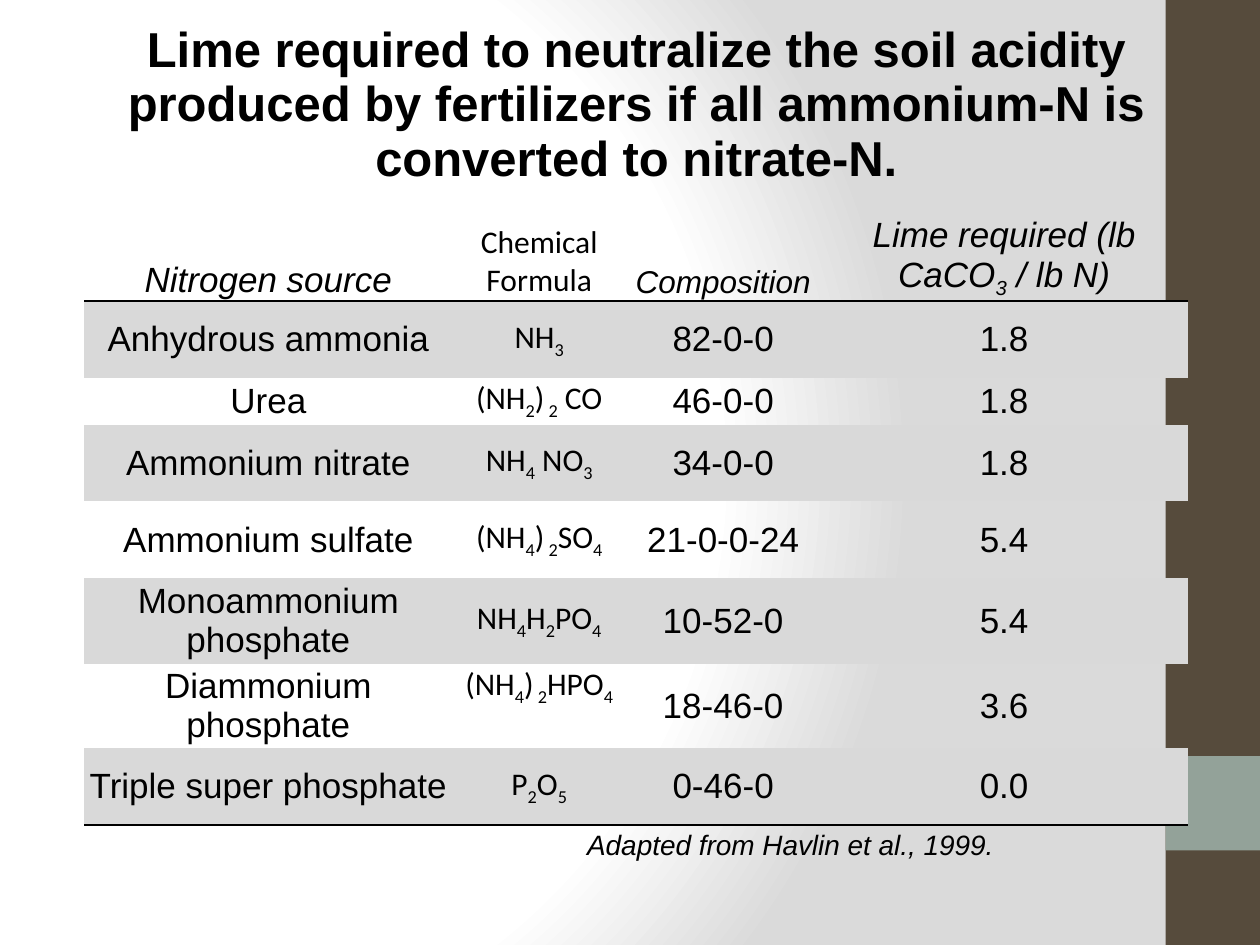
from lxml import etree
from pptx import Presentation
from pptx.dml.color import RGBColor
from pptx.enum.shapes import MSO_SHAPE
from pptx.enum.text import MSO_ANCHOR, PP_ALIGN
from pptx.oxml import parse_xml
from pptx.oxml.ns import nsdecls, qn
from pptx.util import Inches, Pt

COLORS = {
    "black": "000000", "white": "FFFFFF", "gray": "DADADA",
    "band": "D9D9D9", "brown": "564B3C", "sage": "93A299",
}
NO_STYLE = "{2D5ABB26-0587-4C30-8999-92F81FD0307C}"
COL_WIDTHS = [2.92, 1.38, 1.54, 2.92]
ROW_HEIGHTS = [0.9, 0.9, 0.61, 0.37, 0.61, 0.61, 0.68, 0.67, 0.61, 0.33]
TITLE = ("Lime required to neutralize the soil acidity produced by fertilizers "
         "if all ammonium-N is converted to nitrate-N.")
SOURCE = "Adapted from Havlin et al., 1999."
HEADERS = [
    ("Nitrogen source", "Arial", 20, True),
    ("Chemical Formula", "Calibri", 18, False),
    ("Composition", "Arial", 18, True),
    ("Lime required (lb CaCO|3| / lb N)", "Arial", 20, True),
]
FERTILIZERS = [
    ("Anhydrous ammonia", "NH|3", "82-0-0", "1.8"),
    ("Urea", "(NH|2|)| 2| CO", "46-0-0", "1.8"),
    ("Ammonium nitrate", "NH|4| NO|3", "34-0-0", "1.8"),
    ("Ammonium sulfate", "(NH|4|)| 2|SO|4", "21-0-0-24", "5.4"),
    ("Monoammonium phosphate", "NH|4|H|2|PO|4", "10-52-0", "5.4"),
    ("Diammonium phosphate", "(NH|4|)| 2|HPO|4", "18-46-0", "3.6"),
    ("Triple super phosphate", "P|2|O|5", "0-46-0", "0.0"),
]


def paint_background(s):
    """Fill the slide with a circular gradient from white to gray."""
    s.background.fill.gradient()
    old = s.element.find(".//" + qn("a:gradFill"))
    stops = "".join(
        f'<a:gs pos="{pos}000"><a:srgbClr val="{COLORS[name]}"/></a:gs>'
        for pos, name in [(0, "white"), (75, "white"), (100, "gray")])
    new = parse_xml(
        f'<a:gradFill {nsdecls("a")} rotWithShape="1"><a:gsLst>{stops}</a:gsLst>'
        '<a:path path="circle"><a:fillToRect l="20000" t="50000" r="100000" '
        'b="50000"/></a:path></a:gradFill>')
    old.getparent().replace(old, new)


def add_side_bar(s, left, top, width, height):
    """Draw the brown side bar with its sage square."""
    for y, h, color in [(top, height, "brown"), (top + 0.8 * height, width, "sage")]:
        sp = s.shapes.add_shape(MSO_SHAPE.RECTANGLE, Inches(left), Inches(y),
                                Inches(width), Inches(h))
        sp.shadow.inherit = False
        sp.fill.solid()
        sp.fill.fore_color.rgb = RGBColor.from_string(COLORS[color])
        sp.line.fill.background()


def fill_cell(cell, text, font="Arial", size=20, bold=False, italic=False,
              align=PP_ALIGN.CENTER, anchor=MSO_ANCHOR.MIDDLE):
    """Write text in a cell, where every second part between bars is subscript."""
    cell.vertical_anchor = anchor
    p = cell.text_frame.paragraphs[0]
    p.alignment = align
    for i, part in enumerate(text.split("|")):
        r = p.add_run()
        r.text = part
        r.font.name, r.font.size = font, Pt(size)
        r.font.bold, r.font.italic = bold, italic
        r.font.color.rgb = RGBColor.from_string(COLORS["black"])
        if i % 2:
            r.font._element.set("baseline", "-25000")
    return p


def add_rule(tbl, row):
    """Draw a black line below the given row."""
    for cell in tbl.rows[row].cells:
        ln = etree.Element(qn("a:lnB"), w=str(Pt(1)))
        fill = etree.SubElement(ln, qn("a:solidFill"))
        etree.SubElement(fill, qn("a:srgbClr"), val=COLORS["black"])
        cell._tc.get_or_add_tcPr().insert(0, ln)


def make_grid(s, left, top, width, height):
    """Add the plain table with its sizes, margins and banded rows."""
    gf = s.shapes.add_table(len(ROW_HEIGHTS), len(COL_WIDTHS), Inches(left),
                            Inches(top), Inches(width), Inches(height))
    tbl = gf.table
    tbl.first_row = tbl.horz_banding = False
    gf.element.find(".//" + qn("a:tableStyleId")).text = NO_STYLE
    for col, w in zip(tbl.columns, COL_WIDTHS):
        col.width = Inches(w)
    for y, (row, h) in enumerate(zip(tbl.rows, ROW_HEIGHTS)):
        row.height = Inches(h)
        for cell in row.cells:
            cell.margin_left = cell.margin_right = Inches(0.01)
            cell.margin_top = cell.margin_bottom = Inches(0.01)
            if y in range(2, 9, 2):
                cell.fill.solid()
                cell.fill.fore_color.rgb = RGBColor.from_string(COLORS["band"])
            else:
                cell.fill.background()
    gf.height = Inches(height)
    return tbl


def add_lime_table(s, left, top, width, height):
    """Build the fertilizer table with its title and source rows."""
    tbl = make_grid(s, left, top, width, height)
    last = len(ROW_HEIGHTS) - 1
    for y in (0, last):
        tbl.cell(y, 0).merge(tbl.cell(y, len(COL_WIDTHS) - 1))
    fill_cell(tbl.cell(0, 0), TITLE, size=28, bold=True)
    for x, (text, font, size, italic) in enumerate(HEADERS):
        fill_cell(tbl.cell(1, x), text, font, size, italic=italic,
                  anchor=MSO_ANCHOR.BOTTOM)
    for y, values in enumerate(FERTILIZERS, 2):
        for x, text in enumerate(values):
            font, size = ("Calibri", 18) if x == 1 else ("Arial", 20)
            fill_cell(tbl.cell(y, x), text, font, size)
    tbl.cell(7, 1).vertical_anchor = MSO_ANCHOR.TOP
    p = fill_cell(tbl.cell(last, 0), SOURCE, size=16, italic=True,
                  align=PP_ALIGN.LEFT)
    p._p.get_or_add_pPr().set("marL", str(Inches(3.98)))
    for row in (1, last - 1):
        add_rule(tbl, row)


def main():
    """Build and save the slide."""
    prs = Presentation()
    prs.slide_width, prs.slide_height = Inches(10), Inches(7.5)
    s = prs.slides.add_slide(prs.slide_layouts[6])
    paint_background(s)
    add_side_bar(s, 9.25, 0, 0.75, 7.5)
    add_lime_table(s, 0.67, 0.17, 8.75, 6.86)
    prs.save("out.pptx")


if __name__ == "__main__":
    main()
